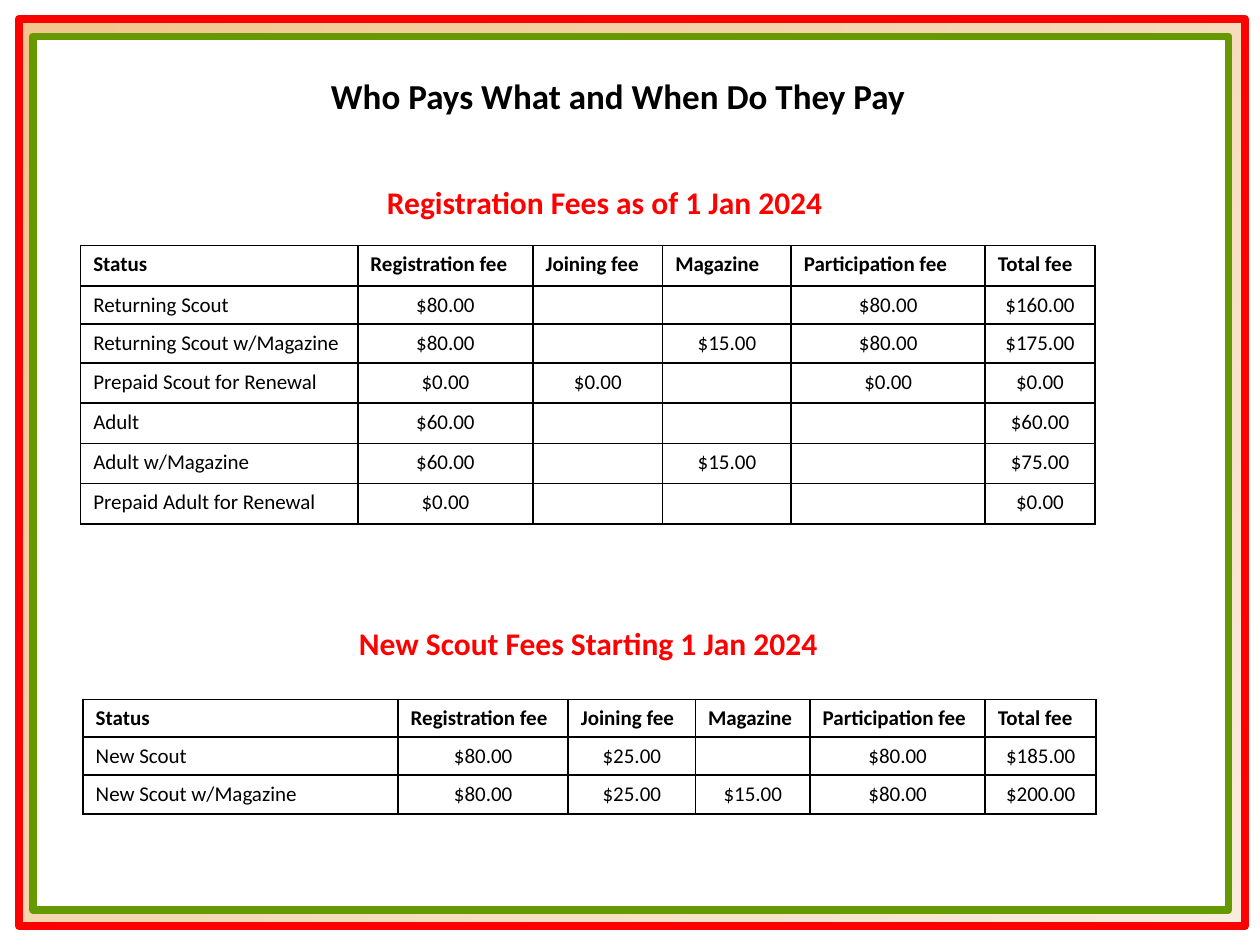
from lxml import etree
from pptx import Presentation
from pptx.dml.color import RGBColor
from pptx.enum.shapes import MSO_SHAPE
from pptx.enum.text import PP_ALIGN
from pptx.oxml.ns import qn
from pptx.util import Inches, Pt

RECTANGLE = MSO_SHAPE.RECTANGLE
LEFT, CENTER = PP_ALIGN.LEFT, PP_ALIGN.CENTER

THEME = {
    "font": "Calibri",
    "black": "000000", "white": "FFFFFF", "red": "FF0000", "green": "669900",
    "sand": ("F2C68C", "F9ECDE"),
    "title": 20, "heading": 18, "body": 12,
    "frame_line": 4.5, "cell_line": 1,
}

# Content
HEADER = ("Status", "Registration fee", "Joining fee", "Magazine",
          "Participation fee", "Total fee")
HEADINGS = [  # text, left, top, width, height, size, colour
    ("Who Pays What and When Do They Pay", 2.39, 0.54, 5.03, 0.44, "title", "black"),
    ("Registration Fees as of 1 Jan 2024", 2.3, 1.4, 5, 0.4, "heading", "red"),
    ("New Scout Fees Starting 1 Jan 2024", 2.17, 4.9, 5, 0.4, "heading", "red"),
]
FEE_TABLES = [
    {
        "left": 0.64, "top": 1.95,
        "columns": (2.2, 1.39, 1.03, 1.02, 1.54, 0.87),
        "heights": (0.32, 0.3, 0.31, 0.32, 0.32, 0.32, 0.32),
        "rows": [
            ("Returning Scout", "$80.00", "", "", "$80.00", "$160.00"),
            ("Returning Scout w/Magazine", "$80.00", "", "$15.00", "$80.00", "$175.00"),
            ("Prepaid Scout for Renewal", "$0.00", "$0.00", "", "$0.00", "$0.00"),
            ("Adult", "$60.00", "", "", "", "$60.00"),
            ("Adult w/Magazine", "$60.00", "", "$15.00", "", "$75.00"),
            ("Prepaid Adult for Renewal", "$0.00", "", "", "", "$0.00"),
        ],
    },
    {
        "left": 0.66, "top": 5.55,
        "columns": (2.5, 1.35, 1.01, 0.91, 1.39, 0.88),
        "heights": (0.3, 0.3, 0.31),
        "rows": [
            ("New Scout", "$80.00", "$25.00", "", "$80.00", "$185.00"),
            ("New Scout w/Magazine", "$80.00", "$25.00", "$15.00", "$80.00", "$200.00"),
        ],
    },
]


def color(name):
    return RGBColor.from_string(THEME[name])


def style_paragraph(paragraph, size, color_name, bold, alignment):
    paragraph.alignment = alignment
    font = paragraph.font
    font.name, font.size, font.bold = THEME["font"], Pt(THEME[size]), bold
    font.color.rgb = color(color_name)


def add_frame(slide, box, line_name):
    frame = slide.shapes.add_shape(RECTANGLE, *map(Inches, box))
    frame.shadow.inherit = False
    frame.line.color.rgb = color(line_name)
    frame.line.width = Pt(THEME["frame_line"])
    return frame


def add_heading(slide, text, left, top, width, height, size, color_name):
    box = slide.shapes.add_textbox(*map(Inches, (left, top, width, height)))
    box.text_frame.word_wrap = True
    paragraph = box.text_frame.paragraphs[0]
    paragraph.text = text
    style_paragraph(paragraph, size, color_name, True, CENTER)


def add_borders(cell):
    properties = cell._tc.get_or_add_tcPr()
    for side in ("a:lnL", "a:lnR", "a:lnT", "a:lnB"):
        line = etree.SubElement(properties, qn(side), w=str(Pt(THEME["cell_line"])))
        fill = etree.SubElement(line, qn("a:solidFill"))
        etree.SubElement(fill, qn("a:srgbClr"), val=THEME["black"])


def add_fee_table(slide, left, top, columns, heights, rows):
    box = map(Inches, (left, top, sum(columns), sum(heights)))
    table = slide.shapes.add_table(len(heights), len(columns), *box).table
    table.horz_banding = False
    for column, width in zip(table.columns, columns):
        column.width = Inches(width)
    for row, height in zip(table.rows, heights):
        row.height = Inches(height)
    for row_index, values in enumerate([HEADER, *rows]):
        for column_index, value in enumerate(values):
            cell = table.cell(row_index, column_index)
            is_header = row_index == 0
            add_borders(cell)
            cell.fill.background()
            paragraph = cell.text_frame.paragraphs[0]
            paragraph.text = value
            alignment = LEFT if is_header or column_index == 0 else CENTER
            style_paragraph(paragraph, "body", "black", is_header, alignment)
            if not value:  # keeps an empty cell as low as its row
                etree.SubElement(paragraph._p, qn("a:endParaRPr"),
                                 sz=str(THEME["body"] * 100))


def main():
    presentation = Presentation()
    presentation.slide_width, presentation.slide_height = Inches(10), Inches(7.5)
    slide = presentation.slides.add_slide(presentation.slide_layouts[6])

    # Double frame
    outer = add_frame(slide, (0.15, 0.15, 9.73, 7.2), "red")
    outer.fill.gradient()
    outer.fill.gradient_angle = 315
    for stop, position, shade in zip(outer.fill.gradient_stops, (0, 1), THEME["sand"]):
        stop.position = position
        stop.color.rgb = RGBColor.from_string(shade)
    inner = add_frame(slide, (0.26, 0.29, 9.49, 6.93), "green")
    inner.fill.solid()
    inner.fill.fore_color.rgb = color("white")

    # Headings and fee tables
    for heading in HEADINGS:
        add_heading(slide, *heading)
    for fee_table in FEE_TABLES:
        add_fee_table(slide, **fee_table)

    presentation.save("out.pptx")


if __name__ == "__main__":
    main()
